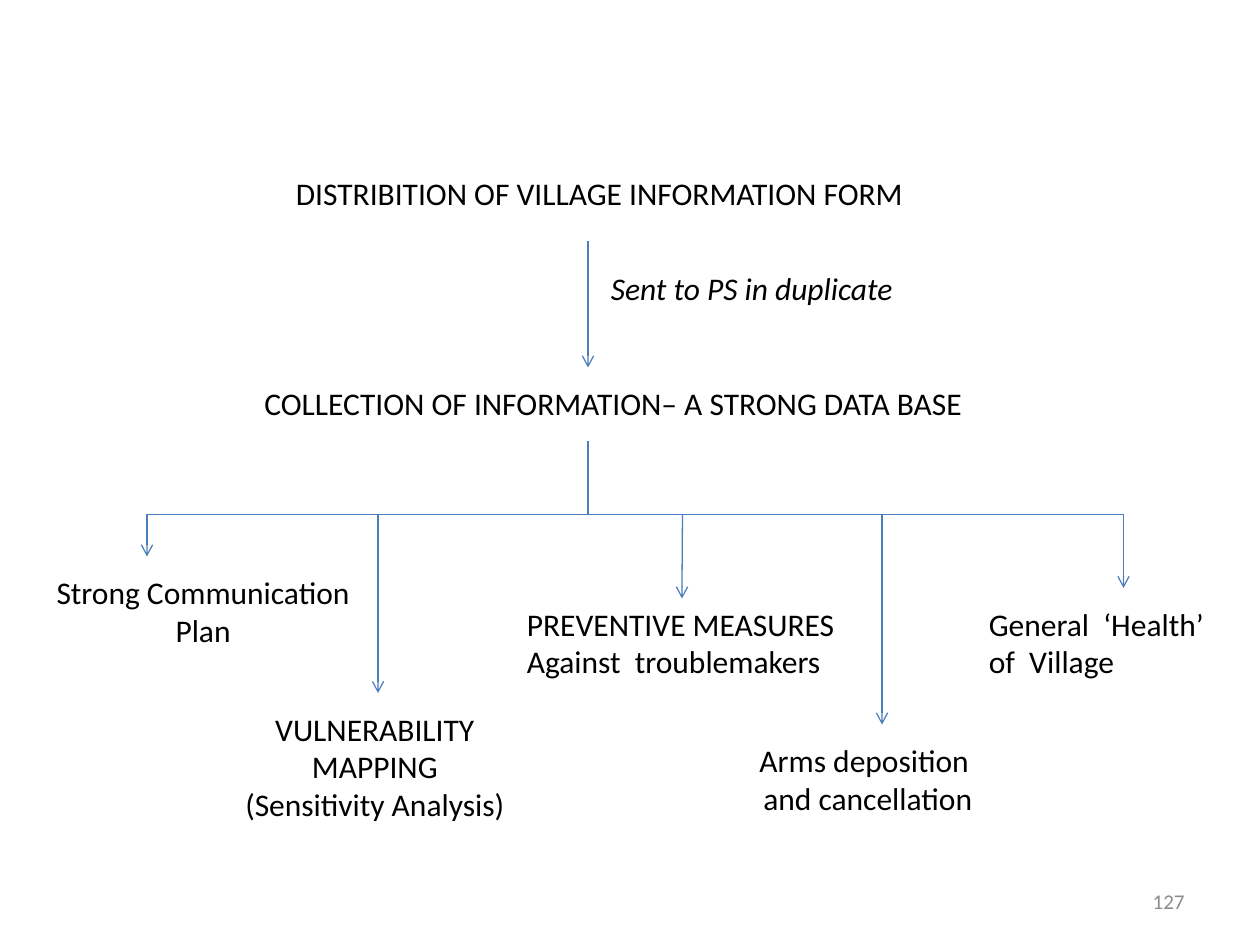
from dataclasses import dataclass

from lxml.etree import SubElement
from pptx import Presentation
from pptx.dml.color import RGBColor
from pptx.enum.shapes import MSO_CONNECTOR
from pptx.enum.text import MSO_ANCHOR, MSO_AUTO_SIZE, PP_ALIGN
from pptx.oxml.ns import qn
from pptx.shapes.autoshape import Shape
from pptx.shapes.connector import Connector
from pptx.slide import Slide
from pptx.util import Inches, Pt

COLUMNS, ROWS = 120, 90
WIDTH, HEIGHT = Inches(10), Inches(7.5)
LEFT, CENTER, RIGHT = PP_ALIGN.LEFT, PP_ALIGN.CENTER, PP_ALIGN.RIGHT
LINE_COLOR = "4B7EBC"
TRUNK, BUS = 56, 49


@dataclass(frozen=True)
class Label:
    lines: tuple[str, ...]
    column: float
    row: float
    columns: float
    align: PP_ALIGN = LEFT
    italic: bool = False
    size: int = 18
    color: str = "000000"


@dataclass(frozen=True)
class Branch:
    column: float
    end_row: float
    label: Label
    joined: bool = False


STEPS = (
    Label(("DISTRIBITION OF VILLAGE INFORMATION FORM",), 27, 16, 61.4),
    Label(("Sent to PS in duplicate",), 57, 25, 29.5, italic=True),
    Label(("COLLECTION OF INFORMATION– A STRONG DATA BASE",), 24, 36, 69.5),
)

BRANCHES = (
    Branch(14, 53, Label(("Strong Communication", "Plan"), 4, 54, 30.7, CENTER)),
    Branch(36, 66, Label(("VULNERABILITY", "MAPPING", "(Sensitivity Analysis)"),
                         22, 67, 27.4, CENTER)),
    Branch(65, 57, Label(("PREVENTIVE MEASURES", "Against  troublemakers"),
                         49, 57, 31.9), joined=True),
    Branch(84, 69, Label(("Arms deposition ", "and cancellation"), 71, 70, 23.3, CENTER)),
    Branch(107, 56, Label(("General  ‘Health’", "of  Village"), 93, 57, 23.8)),
)

PAGE_NUMBER = Label(("127",), 86, 83.4, 28, RIGHT, size=12, color="8C8C8C")


def across(columns: float) -> int:
    """Turn grid columns into a length."""
    return round(WIDTH * columns / COLUMNS)


def down(rows: float) -> int:
    """Turn grid rows into a length."""
    return round(HEIGHT * rows / ROWS)


def paint(color: str) -> RGBColor:
    """Turn a hex string into a colour."""
    return RGBColor.from_string(color)


def draw_label(page: Slide, label: Label) -> Shape:
    """Write a label with one paragraph for each line."""
    height = Inches(0.1 + 0.3 * len(label.lines))
    box = page.shapes.add_textbox(
        across(label.column), down(label.row), across(label.columns), height)
    frame = box.text_frame
    frame.word_wrap = False
    frame.auto_size = MSO_AUTO_SIZE.SHAPE_TO_FIT_TEXT
    frame.text = "\n".join(label.lines)
    for para in frame.paragraphs:
        para.alignment = label.align
        para.font.name = "Calibri"
        para.font.size = Pt(label.size)
        para.font.italic = label.italic
        para.font.color.rgb = paint(label.color)
    return box


def draw_line(page: Slide, start: tuple[float, float], end: tuple[float, float],
              arrow: bool = False) -> Connector:
    """Draw a thin line between two grid points."""
    line = page.shapes.add_connector(
        MSO_CONNECTOR.STRAIGHT,
        across(start[0]), down(start[1]), across(end[0]), down(end[1]))
    line.line.color.rgb = paint(LINE_COLOR)
    line.line.width = Pt(0.75)
    properties = line._element.spPr
    if arrow:
        SubElement(properties.find(qn("a:ln")), qn("a:tailEnd"), type="arrow")
    SubElement(properties, qn("a:effectLst"))
    return line


def draw_branch(page: Slide, branch: Branch) -> None:
    """Drop an arrow from the shared bar to a label."""
    box = draw_label(page, branch.label)
    arrow = draw_line(page, (branch.column, BUS), (branch.column, branch.end_row), arrow=True)
    if branch.joined:
        arrow.end_connect(box, 0)


def draw_page_number(page: Slide) -> None:
    """Write the page number, centred in the height of its box."""
    frame = draw_label(page, PAGE_NUMBER).text_frame
    frame.auto_size = MSO_AUTO_SIZE.NONE
    frame.word_wrap = True
    frame.vertical_anchor = MSO_ANCHOR.MIDDLE


def main() -> None:
    """Build the flow chart and save it."""
    deck = Presentation()
    deck.slide_width, deck.slide_height = WIDTH, HEIGHT
    page = deck.slides.add_slide(deck.slide_layouts[6])
    for step in STEPS:
        draw_label(page, step)
    draw_line(page, (TRUNK, 23), (TRUNK, 35), arrow=True)
    draw_line(page, (TRUNK, 42), (TRUNK, BUS))
    draw_line(page, (BRANCHES[0].column, BUS), (BRANCHES[-1].column, BUS))
    for branch in BRANCHES:
        draw_branch(page, branch)
    draw_page_number(page)
    deck.save("out.pptx")


if __name__ == "__main__":
    main()
